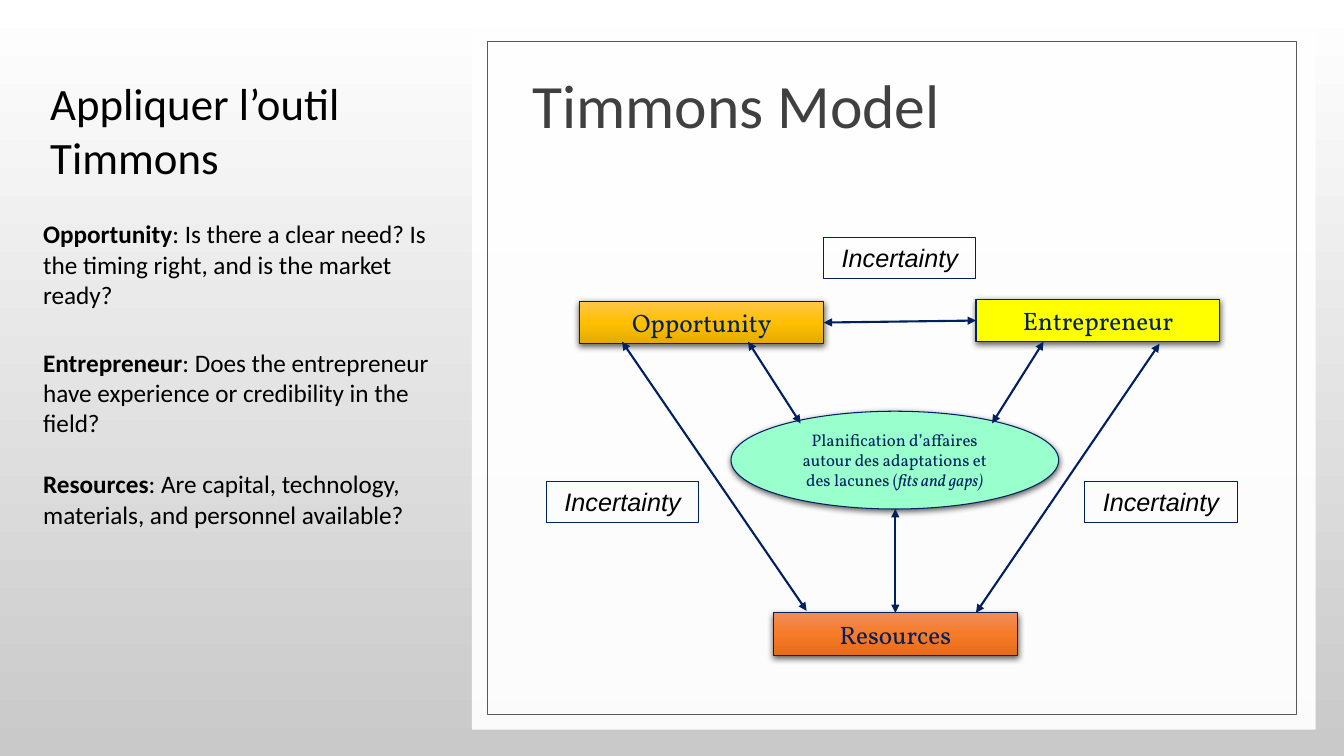
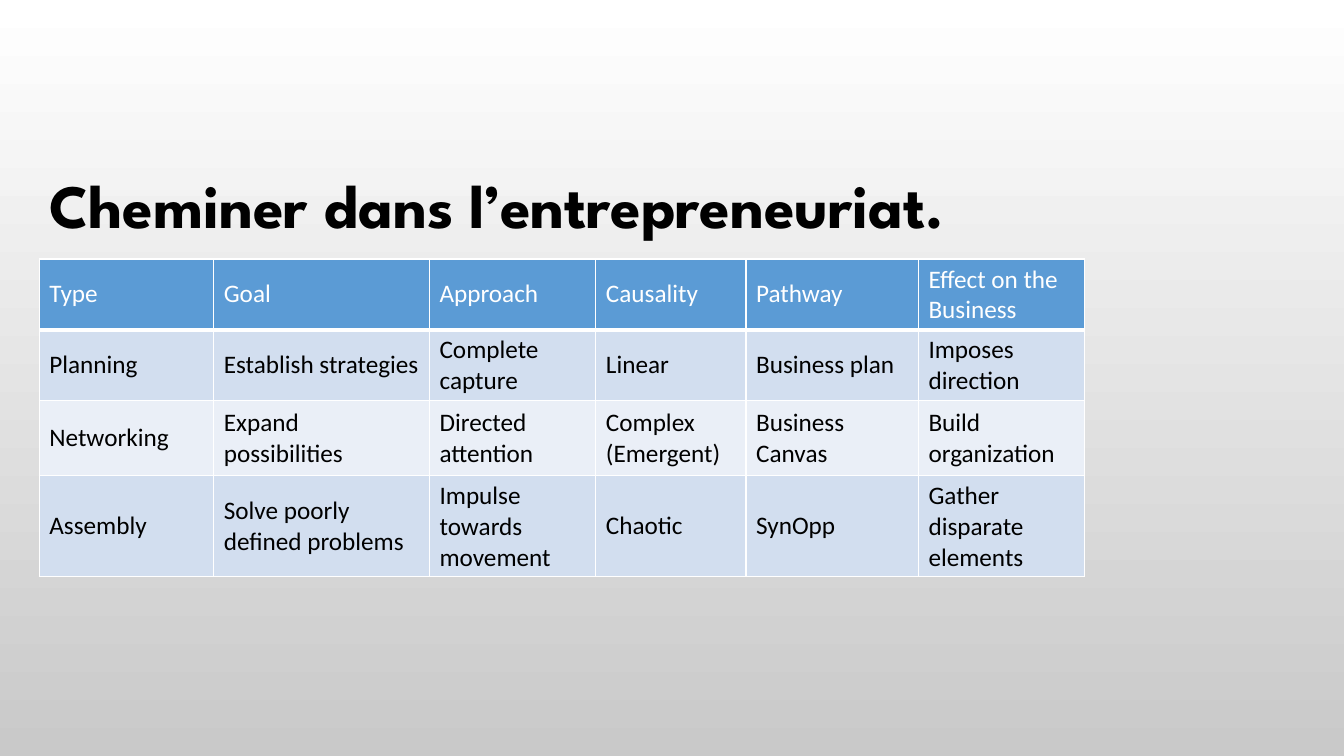
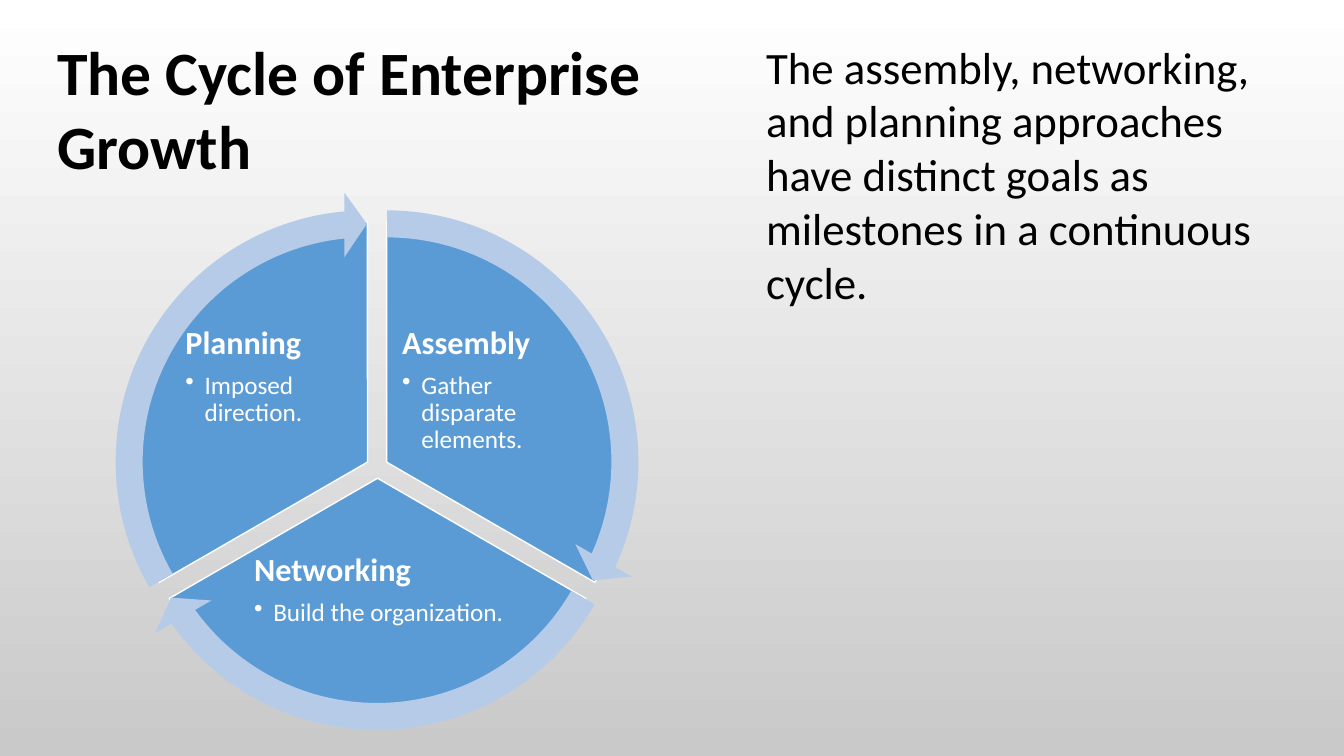
import copy
import math
from dataclasses import dataclass

import lxml.etree
import pptx
import pptx.dml.color
import pptx.enum.shapes
import pptx.enum.text
import pptx.oxml.ns
import pptx.util

PX = 9144
SHAPE = pptx.enum.shapes.MSO_SHAPE
ANCHOR = pptx.enum.text.MSO_ANCHOR
ALIGN = pptx.enum.text.PP_ALIGN
qn = pptx.oxml.ns.qn


@dataclass(frozen=True)
class Theme:
    body_font: str = "Calibri"
    display_font: str = "League Spartan"
    node_font: str = "Vollkorn"
    label_font: str = "Arial"
    title: int = 44
    lead: int = 32
    slice_title: int = 23
    body: int = 18
    small: int = 12
    ink: str = "000000"
    white: str = "FFFFFF"
    grey: str = "404040"
    frame: str = "595959"
    navy: str = "002060"
    blue: str = "5B9BD5"
    pale_blue: str = "B5CBE7"
    mint: str = "99FFCC"
    backdrop: tuple = ("FFFFFF", "C9C9C9")
    gold: tuple = ("FFC64B", "FFC000", "E3AB00")
    orange: tuple = ("F18C57", "F67B28", "E56C19")
    yellow: tuple = ("FFFF00",)
    bands: tuple = ("D2DEEF", "EAEFF7")


T = Theme()


def rgb(color):
    return pptx.dml.color.RGBColor.from_string(color)


def px(*lengths):
    return [round(n * PX) for n in lengths]


def inside(box, x, y, w, h):
    return box[0] + x, box[1] + y, w, h


def sub(parent, tag, **attrs):
    child = lxml.etree.SubElement(parent, qn(tag))
    for key, value in attrs.items():
        child.set(key, str(value))
    return child


def paint(fill, element, colors):
    if len(colors) == 1:
        fill.solid()
        fill.fore_color.rgb = rgb(colors[0])
        return
    fill.gradient()
    fill.gradient_angle = 270
    stops = element.find(".//" + qn("a:gsLst"))
    for _ in colors[2:]:
        stops.append(copy.deepcopy(stops[0]))
    for i, (stop, color) in enumerate(zip(fill.gradient_stops, colors)):
        stop.position = i / (len(colors) - 1)
        stop.color.rgb = rgb(color)


def add_slide(prs):
    s = prs.slides.add_slide(prs.slide_layouts[6])
    paint(s.background.fill, s.element, T.backdrop)
    return s


def style(p, size, color=T.ink, font=T.body_font, bold=None, italic=None):
    p.font.size = pptx.util.Pt(size)
    p.font.name = font
    p.font.color.rgb = rgb(color)
    p.font.bold = bold
    p.font.italic = italic


def write(p, runs, size, **look):
    for text, emphasis in [(runs, "")] if isinstance(runs, str) else runs:
        r = p.add_run()
        r.text = text
        if emphasis:
            setattr(r.font, emphasis, True)
    style(p, size, **look)


def add_text(s, box, paragraphs, size, gaps=(), **look):
    tf = s.shapes.add_textbox(*px(*box)).text_frame
    tf.word_wrap = True
    for i, runs in enumerate(paragraphs):
        p = tf.add_paragraph() if i else tf.paragraphs[0]
        write(p, runs, size, **look)
        if i and gaps:
            p.space_before = pptx.util.Pt(gaps[i - 1])
    return tf


def add_shape(s, kind, box, colors=(), line=None, width=0.75, shadow=False):
    sp = s.shapes.add_shape(kind, *px(*box))
    sp.shadow.inherit = False
    if colors:
        paint(sp.fill, sp.element, colors)
    else:
        sp.fill.background()
    if line:
        sp.line.color.rgb = rgb(line)
        sp.line.width = pptx.util.Pt(width)
    else:
        sp.line.fill.background()
    if shadow:
        effects = sp.element.spPr.find(qn("a:effectLst"))
        cast = sub(effects, "a:outerShdw", blurRad=57150, dist=19050,
                   dir=5400000, algn="ctr", rotWithShape=0)
        sub(sub(cast, "a:srgbClr", val=T.ink), "a:alpha", val=63000)
    return sp


def add_node(s, kind, box, colors, runs, size=T.body):
    sp = add_shape(s, kind, box, colors, T.navy, shadow=True)
    tf = sp.text_frame
    tf.vertical_anchor = ANCHOR.MIDDLE
    tf.word_wrap = True
    p = tf.paragraphs[0]
    p.alignment = ALIGN.CENTER
    write(p, runs, size, color=T.navy, font=T.node_font)
    return sp


def add_label(s, box, text):
    tf = add_shape(s, SHAPE.RECTANGLE, box, line=T.navy).text_frame
    tf.vertical_anchor = ANCHOR.TOP
    tf.word_wrap = True
    p = tf.paragraphs[0]
    p.alignment = ALIGN.CENTER
    write(p, text, T.body, font=T.label_font, italic=True)


def add_arrow(s, box, x1, y1, x2, y2):
    ends = box[0] + x1, box[1] + y1, box[0] + x2, box[1] + y2
    c = s.shapes.add_connector(pptx.enum.shapes.MSO_CONNECTOR.STRAIGHT, *px(*ends))
    c.line.color.rgb = rgb(T.navy)
    c.line.width = pptx.util.Pt(1.5)
    ln = c.line._get_or_add_ln()
    for tag in ("a:headEnd", "a:tailEnd"):
        sub(ln, tag, type="triangle")
    sub(c.element.spPr, "a:effectLst")
    return c


def timmons_panel(s, box):
    panel = add_shape(s, SHAPE.RECTANGLE, box, (T.white,))
    sub(panel.element.spPr.find(".//" + qn("a:srgbClr")), "a:alpha", val=94000)
    frame = inside(box, 15, 15, box[2] - 34, box[3] - 30)
    add_shape(s, SHAPE.RECTANGLE, frame, line=T.frame, width=0.5)
    tf = add_text(s, inside(box, 50, 44, 735, 191), ["Timmons Model"], T.title, color=T.grey)
    tf.paragraphs[0].line_spacing = 0.9

    opportunity, resources, entrepreneur = [
        add_node(s, SHAPE.RECTANGLE, inside(box, x, y, 242, 42), colors, name)
        for x, y, colors, name in (
            (107, 273, T.gold, "Opportunity"),
            (299, 582, T.orange, "Resources"),
            (500, 271, T.yellow, "Entrepreneur"),
        )
    ]
    plan = [("Planification d’affaires autour des adaptations et des lacunes (", ""),
            ("fits and gaps)", "italic")]
    add_node(s, SHAPE.OVAL, inside(box, 257, 382, 325, 97), (T.mint,), plan, T.small)
    for x, y in ((608, 452), (349, 210), (74, 452)):
        add_label(s, inside(box, x, y, 151, 40), "Incertainty")

    for ends in ((682, 315, 500, 582), (516, 394, 567, 313),
                 (326, 394, 274, 313), (332, 580, 149, 313)):
        add_arrow(s, box, *ends)
    add_arrow(s, box, 420, 582, 420, 479).begin_connect(resources, 0)
    across = add_arrow(s, box, 349, 294, 500, 292)
    across.begin_connect(opportunity, 3)
    across.end_connect(entrepreneur, 1)


def timmons_questions(s, box):
    questions = (
        ("Opportunity", "Is there a clear need? Is the timing right, and is the market ready?"),
        ("Entrepreneur", "Does the entrepreneur have experience or credibility in the field?"),
        ("Resources", "Are capital, technology, materials, and personnel available?"),
    )
    runs = [[(name, "bold"), (": " + question, "")] for name, question in questions]
    add_text(s, inside(box, 0, 142, 417, 320), runs, T.body, gaps=(27, 22))
    add_text(s, inside(box, 7, 0, 377, 118), ["Appliquer l’outil Timmons"], T.lead)


def set_borders(cell, bottom):
    tcPr = cell._tc.get_or_add_tcPr()
    for i, (side, width) in enumerate((("L", 1), ("R", 1), ("T", 1), ("B", bottom))):
        ln = lxml.etree.Element(qn("a:ln" + side), w=str(width * 12700))
        sub(sub(ln, "a:solidFill"), "a:srgbClr", val=T.white)
        tcPr.insert(i, ln)


def approach_table(s, x, y):
    rows = (
        ("Type", "Goal", "Approach", "Causality", "Pathway", "Effect on the Business"),
        ("Planning", "Establish strategies", "Complete capture", "Linear",
         "Business plan", "Imposes direction"),
        ("Networking", "Expand possibilities", "Directed attention",
         "Complex (Emergent)", "Business Canvas", "Build organization"),
        ("Assembly", "Solve poorly defined problems", "Impulse towards movement",
         "Chaotic", "SynOpp", "Gather disparate elements"),
    )
    widths = (173, 214, 165, 149, 171, 165)
    heights = (70, 70, 75, 100)
    box = px(x, y, sum(widths), sum(heights))
    table = s.shapes.add_table(len(rows), len(widths), *box).table
    table.horz_banding = False
    table.first_row = False
    for column, width in zip(table.columns, widths):
        column.width = width * PX
    for i, (row, height) in enumerate(zip(rows, heights)):
        table.rows[i].height = height * PX
        for j, text in enumerate(row):
            cell = table.cell(i, j)
            cell.vertical_anchor = ANCHOR.MIDDLE
            cell.fill.solid()
            cell.fill.fore_color.rgb = rgb(T.bands[(i - 1) % 2] if i else T.blue)
            set_borders(cell, 1 if i else 3)
            write(cell.text_frame.paragraphs[0], text, T.body, color=T.ink if i else T.white)


def slice_text(s, box, name, detail):
    tf = add_text(s, box, [name], T.slice_title, color=T.white, bold=True)
    tf.margin_left = tf.margin_right = tf.margin_top = tf.margin_bottom = 3 * PX
    p = tf.add_paragraph()
    pPr = p._p.get_or_add_pPr()
    pPr.set("marL", str(19 * PX))
    pPr.set("indent", str(-19 * PX))
    sub(pPr, "a:buChar", char="•")
    write(p, detail, T.body, color=T.white)
    for p, after in zip(tf.paragraphs, (8, 3)):
        p.line_spacing = 0.9
        p.space_after = pptx.util.Pt(after)


def growth_cycle(s, box):
    slices = (
        ((300, 131, 170, 142), "Assembly", "Gather disparate elements."),
        ((153, 356, 255, 125), "Networking", "Build the organization."),
        ((85, 131, 170, 142), "Planning", "Imposed direction."),
    )
    hub_x, hub_y, offset = box[0] + 278, box[1] + 274, 11
    degree, head = 0.6, 3.28

    def sector(kind, i, size, color, line=None):
        middle = math.radians(120 * i - 30)
        x = round(hub_x + offset * math.cos(middle) - size / 2)
        y = round(hub_y + offset * math.sin(middle) - size / 2)
        return add_shape(s, kind, (x, y, size, size), (color,), line, 1)

    spans = [((270 + 120 * i) % 360 * degree, (30 + 120 * i) * degree) for i in range(3)]
    for i, ((start, end), (place, name, detail)) in enumerate(zip(spans, slices)):
        pie = sector(SHAPE.PIE, i, 477, T.blue, T.white)
        pie.adjustments[0], pie.adjustments[1] = start, end
        slice_text(s, inside(box, *place), name, detail)
    for i, (start, end) in enumerate(spans):
        arrow = sector(SHAPE.CIRCULAR_ARROW, i, 536, T.pale_blue)
        for k, value in enumerate((0.05, head, end - head, start, 0.06)):
            arrow.adjustments[k] = value


def main():
    prs = pptx.Presentation()
    prs.slide_width, prs.slide_height = px(1333, 750)

    s = add_slide(prs)
    timmons_panel(s, (468, 26, 837, 698))
    timmons_questions(s, (33, 70, 417, 462))

    s = add_slide(prs)
    add_text(s, (39, 161, 1103, 84), ["Cheminer dans l’entrepreneuriat."],
             T.title, font=T.display_font, bold=True)
    approach_table(s, 39, 257)

    s = add_slide(prs)
    add_text(s, (750, 34, 517, 279),
             ["The assembly, networking, and planning approaches have distinct goals "
              "as milestones in a continuous cycle."], T.lead)
    add_text(s, (47, 29, 732, 158), ["The Cycle of Enterprise Growth"], T.title, bold=True)
    growth_cycle(s, (96, 190, 556, 553))

    prs.save("out.pptx")


if __name__ == "__main__":
    main()
